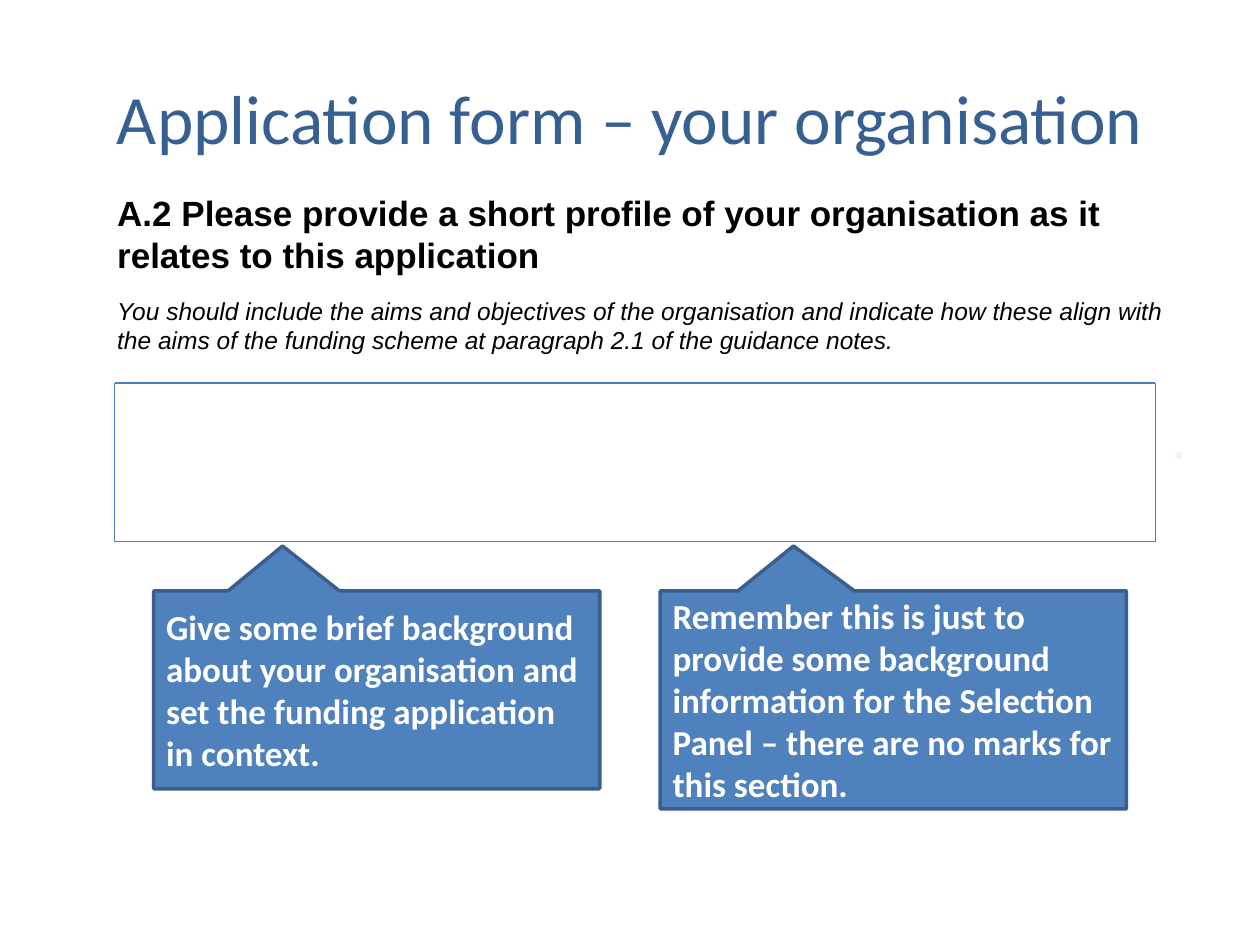
from lxml import etree
from pptx import Presentation
from pptx.dml.color import RGBColor
from pptx.enum.shapes import MSO_CONNECTOR, MSO_SHAPE
from pptx.enum.text import MSO_ANCHOR, MSO_AUTO_SIZE, PP_ALIGN
from pptx.oxml.ns import qn
from pptx.util import Inches, Pt

LINE = MSO_CONNECTOR.STRAIGHT
RECT, CALLOUT = MSO_SHAPE.RECTANGLE, MSO_SHAPE.RECTANGULAR_CALLOUT
LEFT, CENTER = PP_ALIGN.LEFT, PP_ALIGN.CENTER
TOP, MIDDLE = MSO_ANCHOR.TOP, MSO_ANCHOR.MIDDLE

# Content
TITLE = "Application form – your organisation"
# text, style, space before in points
BODY = [
    ("A.2 Please provide a short profile of your organisation as it relates "
     "to this application", "ask", 0),
    ("You should include the aims and objectives of the organisation and "
     "indicate how these align with", "hint", 11.5),
    ("the aims of the funding scheme at paragraph 2.1 of the guidance notes.",
     "hint", 0),
]
# text, left, width, height, pointer tip as shares of the callout
TIPS = [
    ("Give some brief background about your organisation and set the funding "
     "application in context.", 1.22, 3.54, 1.57, (-0.211, -0.727)),
    ("Remember this is just to provide some background information for the "
     "Selection Panel – there are no marks for this section.",
     5.24, 3.7, 1.73, (-0.214, -0.706)),
]

# Theme: font, size, colour, bold, italic for each style
THEME = {
    "title": ("Calibri", 39.6, "376092", False, False),
    "ask": ("Arial", 20, "000000", True, False),
    "hint": ("Arial", 14, "000000", False, True),
    "tip": ("Calibri", 20, "FFFFFF", True, False),
    "fill": "4F81BD",
    "edge": "3A5F8C",
    "frame": "4B7EBC",
    "dot": "F2F2F2",
}

# Layout in inches
WIDE, HIGH = 10, 7.5
TITLE_BOX = (0.5, 0.3, 9, 1.25)
BODY_BOX = (0.83, 1.47, 8.58, 2.17)
FRAME = (0.91, 3.04, 9.17, 4.3)  # left, top, right, bottom
TIP_TOP = 4.69
DOT_BOX = (9.33, 3.59, 0.05, 0.05)


def color(name):
    return RGBColor.from_string(THEME.get(name, name))


def place(shape, box):
    shape.left, shape.top, shape.width, shape.height = map(Inches, box)


def write(para, text, style, align=LEFT):
    para.text = text
    para.alignment = align
    font = para.runs[0].font
    font.name, size, tint, font.bold, font.italic = THEME[style]
    font.size = Pt(size)
    font.color.rgb = color(tint)


def block(slide, kind, box, fill):
    shape = slide.shapes.add_shape(kind, *map(Inches, box))
    shape.shadow.inherit = False
    shape.fill.solid()
    shape.fill.fore_color.rgb = color(fill)
    return shape


def add_title(slide):
    title = slide.shapes.title
    place(title, TITLE_BOX)
    frame = title.text_frame
    frame.vertical_anchor = MIDDLE
    frame.auto_size = MSO_AUTO_SIZE.NONE
    write(frame.paragraphs[0], TITLE, "title", CENTER)


def add_body(slide):
    body = slide.placeholders[1]
    place(body, BODY_BOX)
    frame = body.text_frame
    frame.vertical_anchor = TOP
    frame.auto_size = MSO_AUTO_SIZE.NONE
    frame.text = "\n".join(text for text, _, _ in BODY)
    for para, (text, style, gap) in zip(frame.paragraphs, BODY):
        write(para, text, style)
        para.space_before = Pt(gap)
        # Plain paragraph: no bullet, no indent
        props = para._p.get_or_add_pPr()
        props.set("marL", "0")
        props.set("indent", "0")
        etree.SubElement(props, qn("a:buNone"))


def add_frame(slide):
    x1, y1, x2, y2 = FRAME
    sides = [(x1, y1, x2, y1), (x2, y1, x2, y2),
             (x1, y1, x1, y2), (x1, y2, x2, y2)]
    for ends in sides:
        side = slide.shapes.add_connector(LINE, *map(Inches, ends))
        side.line.color.rgb = color("frame")
        side.line.width = Pt(0.75)
        etree.SubElement(side._element.spPr, qn("a:effectLst"))


def add_tips(slide):
    for text, left, width, height, point in TIPS:
        tip = block(slide, CALLOUT, (left, TIP_TOP, width, height), "fill")
        tip.adjustments[0], tip.adjustments[1] = point
        tip.line.color.rgb = color("edge")
        tip.line.width = Pt(2)
        frame = tip.text_frame
        frame.word_wrap = True
        frame.vertical_anchor = MIDDLE
        write(frame.paragraphs[0], text, "tip")


def main():
    deck = Presentation()
    deck.slide_width, deck.slide_height = Inches(WIDE), Inches(HIGH)
    slide = deck.slides.add_slide(deck.slide_layouts[1])
    add_title(slide)
    add_body(slide)
    block(slide, RECT, DOT_BOX, "dot").line.fill.background()
    add_frame(slide)
    add_tips(slide)
    deck.save("out.pptx")


if __name__ == "__main__":
    main()
